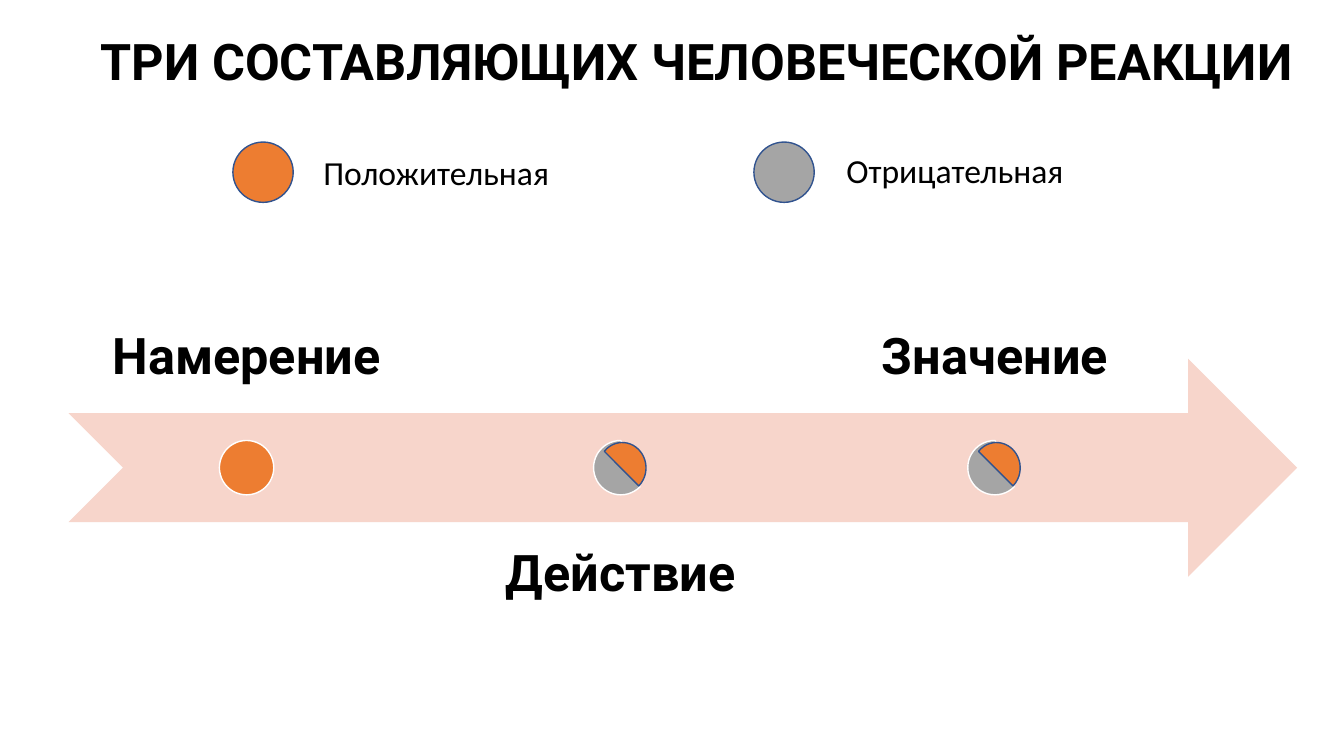
from dataclasses import dataclass
from pptx import Presentation
from pptx.dml.color import RGBColor
from pptx.enum.shapes import MSO_SHAPE
from pptx.enum.text import MSO_ANCHOR, PP_ALIGN
from pptx.util import Cm, Pt

TITLE = "ТРИ СОСТАВЛЯЮЩИХ ЧЕЛОВЕЧЕСКОЙ РЕАКЦИИ"
LEGEND = [
    ("Положительная", "positive", 5.87, (7.9, 3.71, 6.25, 1.27)),
    ("Отрицательная", "negative", 19.0, (21.08, 3.66, 6.05, 1.27)),
]
STAGES = [("Намерение", False), ("Действие", True), ("Значение", True)]


@dataclass(frozen=True)
class Theme:
    positive: str = "ED7D31"
    negative: str = "A5A5A5"
    arrow: str = "F7D5CB"
    outline: str = "31538F"
    white: str = "FFFFFF"
    ink: str = "000000"
    heading_font: str = "Roboto"
    body_font: str = "Calibri"
    heading_size: int = 36
    body_size: int = 24


THEME = Theme()
ARROW_LEFT, ARROW_TOP, ARROW_WIDTH, BAND_HEIGHT = 1.73, 9.04, 30.96, 5.49
STAGE_WIDTH, STAGE_STEP = 8.97, 9.43
LABEL_TOPS = (4.9, 13.13)
MARKER, LEGEND_MARKER, LEGEND_TOP = 1.37, 1.52, 3.58
HALF_WIDTH, HALF_HEIGHT, HALF_SHIFT = 1.19, 1.27, 0.13


def add_text(page, text, frame, font=THEME.heading_font, size=THEME.heading_size,
             bold=True, align=PP_ALIGN.LEFT, anchor=MSO_ANCHOR.TOP,
             inset=None, spacing=None):
    box = page.shapes.add_textbox(*map(Cm, frame)).text_frame
    box.word_wrap = True
    box.vertical_anchor = anchor
    if inset is not None:
        box.margin_left = box.margin_right = Cm(inset)
        box.margin_top = box.margin_bottom = Cm(inset)
    para = box.paragraphs[0]
    para.alignment = align
    if spacing is not None:
        para.line_spacing = spacing
    span = para.add_run()
    span.text = text
    span.font.name, span.font.size, span.font.bold = font, Pt(size), bold
    span.font.color.rgb = RGBColor.from_string(THEME.ink)


def add_figure(page, kind, frame, fill, line=None, angles=(), rotation=0):
    figure = page.shapes.add_shape(kind, *map(Cm, frame))
    figure.shadow.inherit = False
    figure.rotation = rotation
    figure.fill.solid()
    figure.fill.fore_color.rgb = RGBColor.from_string(fill)
    if line:
        figure.line.color.rgb = RGBColor.from_string(line)
        figure.line.width = Pt(1)
    else:
        figure.line.fill.background()
    for index, angle in enumerate(angles):
        figure.adjustments[index] = angle


def add_stage(page, index, name, mixed):
    left = ARROW_LEFT + index * STAGE_STEP
    below = index % 2
    add_text(page, name, (left, LABEL_TOPS[below], STAGE_WIDTH, BAND_HEIGHT),
             align=PP_ALIGN.CENTER, inset=0.71, spacing=0.9,
             anchor=MSO_ANCHOR.TOP if below else MSO_ANCHOR.BOTTOM)
    marker_left = left + (STAGE_WIDTH - MARKER) / 2
    middle = ARROW_TOP + BAND_HEIGHT / 2
    frame = (marker_left, middle - MARKER / 2, MARKER, MARKER)
    if not mixed:
        add_figure(page, MSO_SHAPE.OVAL, frame, THEME.positive, THEME.white)
        return
    add_figure(page, MSO_SHAPE.CHORD, frame, THEME.negative, THEME.white, (27, 162))
    half = (marker_left + HALF_SHIFT, middle - HALF_HEIGHT / 2, HALF_WIDTH, HALF_HEIGHT)
    add_figure(page, MSO_SHAPE.CHORD, half, THEME.positive, THEME.outline,
               (27, 138.43), 177.2)


def main():
    deck = Presentation()
    deck.slide_width, deck.slide_height = Cm(33.87), Cm(19.05)
    page = deck.slides.add_slide(deck.slide_layouts[6])
    add_figure(page, MSO_SHAPE.NOTCHED_RIGHT_ARROW,
               (ARROW_LEFT, ARROW_TOP, ARROW_WIDTH, BAND_HEIGHT), THEME.arrow)
    for index, (name, mixed) in enumerate(STAGES):
        add_stage(page, index, name, mixed)
    add_text(page, TITLE, (2.29, 0.64, ARROW_WIDTH, 1.8))
    for name, tone, left, frame in LEGEND:
        add_figure(page, MSO_SHAPE.OVAL, (left, LEGEND_TOP, LEGEND_MARKER, LEGEND_MARKER),
                   getattr(THEME, tone), THEME.outline)
        add_text(page, name, frame, font=THEME.body_font, size=THEME.body_size, bold=False)
    deck.save("out.pptx")


if __name__ == "__main__":
    main()
